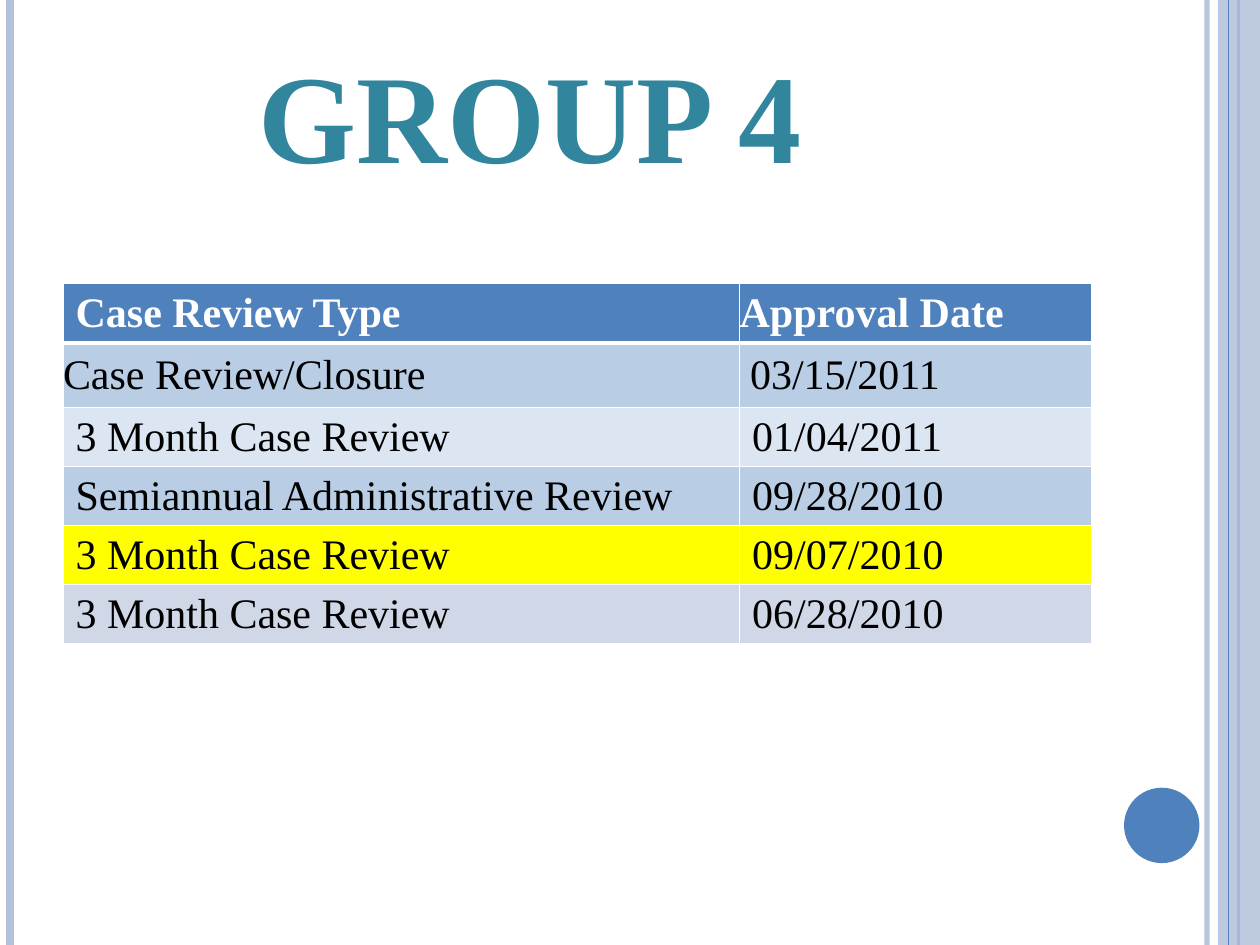
import dataclasses

import lxml.etree
import pptx
import pptx.dml.color
import pptx.enum.shapes
import pptx.enum.text
import pptx.oxml.ns
import pptx.util

Cm = pptx.util.Cm
Pt = pptx.util.Pt
qn = pptx.oxml.ns.qn
Kind = pptx.enum.shapes.MSO_SHAPE
Anchor = pptx.enum.text.MSO_ANCHOR
Align = pptx.enum.text.PP_ALIGN

FONT = "Times New Roman"
HIGH = 19.05
HUES = {
    "blue": "4F81BD", "mist": "B3C1DB", "teal": "31859C",
    "white": "FFFFFF", "black": "000000", "sky": "B9CDE5",
    "pale": "DCE6F2", "yellow": "FFFF00", "gray": "D0D8E8",
}


@dataclasses.dataclass
class Rule:
    x: float
    width: float
    hue: str = "mist"
    alpha: int = 100


@dataclasses.dataclass
class Row:
    kind: str
    date: str
    fill: str
    flush: tuple = ()  # left margin in cm of each cell without padding, or None
    high: float = 1.04


PAD = None
BACK = [Rule(24.33, 3, alpha=93), Rule(0.2, 4.5), Rule(24.97, 1.5, "blue")]
FRONT = Rule(24.77, 0.75, "blue")
ROWS = [
    Row("Case Review Type", "Approval Date", "blue", (PAD, 0)),
    Row("Case Review/Closure", "03/15/2011", "sky", (0, 0.21), 1.3),
    Row("3 Month Case Review", "01/04/2011", "pale"),
    Row("Semiannual Administrative Review", "09/28/2010", "sky"),
    Row("3 Month Case Review", "09/07/2010", "yellow"),
    Row("3 Month Case Review", "06/28/2010", "gray"),
]


def color(hue: str) -> pptx.dml.color.RGBColor:
    return pptx.dml.color.RGBColor.from_string(HUES[hue])


def fade(shape, alpha: int) -> None:
    """Set the opacity, in percent, of the first colour of a shape."""
    tone = next(shape._element.spPr.iter(qn("a:srgbClr")))
    lxml.etree.SubElement(tone, qn("a:alpha"), val=str(alpha * 1000))


def write(frame, text: str, *, size: int, hue: str, bold: bool = False,
          align=Align.LEFT) -> None:
    line = frame.paragraphs[0]
    line.alignment = align
    run = line.add_run()
    run.text = text
    run.font.name = FONT
    run.font.size = Pt(size)
    run.font.bold = bold
    run.font.color.rgb = color(hue)


def draw_rule(slide, rule: Rule) -> None:
    line = slide.shapes.add_connector(
        pptx.enum.shapes.MSO_CONNECTOR.STRAIGHT,
        Cm(rule.x), Cm(0), Cm(rule.x), Cm(HIGH))
    line.line.width = Pt(rule.width)
    line.line.color.rgb = color(rule.hue)
    if rule.alpha < 100:
        fade(line, rule.alpha)
    lxml.etree.SubElement(line._element.spPr, qn("a:effectLst"))


def draw_shape(slide, kind, box: tuple, hue: str):
    shape = slide.shapes.add_shape(kind, *map(Cm, box))
    shape.shadow.inherit = False
    shape.fill.solid()
    shape.fill.fore_color.rgb = color(hue)
    shape.line.fill.background()
    return shape


def edge(cell, sides: dict) -> None:
    """Add white borders, given as side to width in points, before the fill."""
    props = cell._tc.get_or_add_tcPr()
    for spot, side in enumerate("LRTB"):
        line = lxml.etree.Element(qn(f"a:ln{side}"), w=str(Pt(sides[side])))
        fill = lxml.etree.SubElement(line, qn("a:solidFill"))
        lxml.etree.SubElement(fill, qn("a:srgbClr"), val=HUES["white"])
        props.insert(spot, line)


def draw_table(slide) -> None:
    grid = slide.shapes.add_table(
        len(ROWS), 2, Cm(1.27), Cm(5.72), Cm(20.74), Cm(6.5)).table
    for col, wide in zip(grid.columns, (13.64, 7.1)):
        col.width = Cm(wide)
    for r, row in enumerate(ROWS):
        grid.rows[r].height = Cm(row.high)
        for c, text in enumerate((row.kind, row.date)):
            cell = grid.cell(r, c)
            cell.fill.solid()
            cell.fill.fore_color.rgb = color(row.fill)
            left = row.flush[c] if row.flush else PAD
            if left is not PAD:
                cell.margin_left = Cm(left)
                cell.margin_right = cell.margin_top = cell.margin_bottom = 0
                cell.vertical_anchor = Anchor.MIDDLE
            head = r == 0
            write(cell.text_frame, text, size=24, bold=head,
                  hue="white" if head else "black")
            edge(cell, {"L": 1, "R": 1, "T": 3 if r == 1 else 1,
                        "B": 3 if head else 1})


def draw_title(slide) -> None:
    box = slide.shapes.add_textbox(Cm(2.33), Cm(0.64), Cm(16.72), Cm(3.33))
    box.text_frame.word_wrap = True
    write(box.text_frame, "GROUP 4", size=72, hue="teal", bold=True,
          align=Align.CENTER)


def main() -> None:
    deck = pptx.Presentation()
    deck.slide_width, deck.slide_height = Cm(25.4), Cm(HIGH)
    slide = deck.slides.add_slide(deck.slide_layouts[6])
    for rule in BACK:
        draw_rule(slide, rule)
    band = draw_shape(slide, Kind.RECTANGLE, (24.55, 0, 0.85, HIGH), "mist")
    fade(band, 87)
    draw_rule(slide, FRONT)
    draw_shape(slide, Kind.OVAL, (22.66, 15.88, 1.52, 1.52), "blue")
    draw_table(slide)
    draw_title(slide)
    deck.save("out.pptx")


if __name__ == "__main__":
    main()
